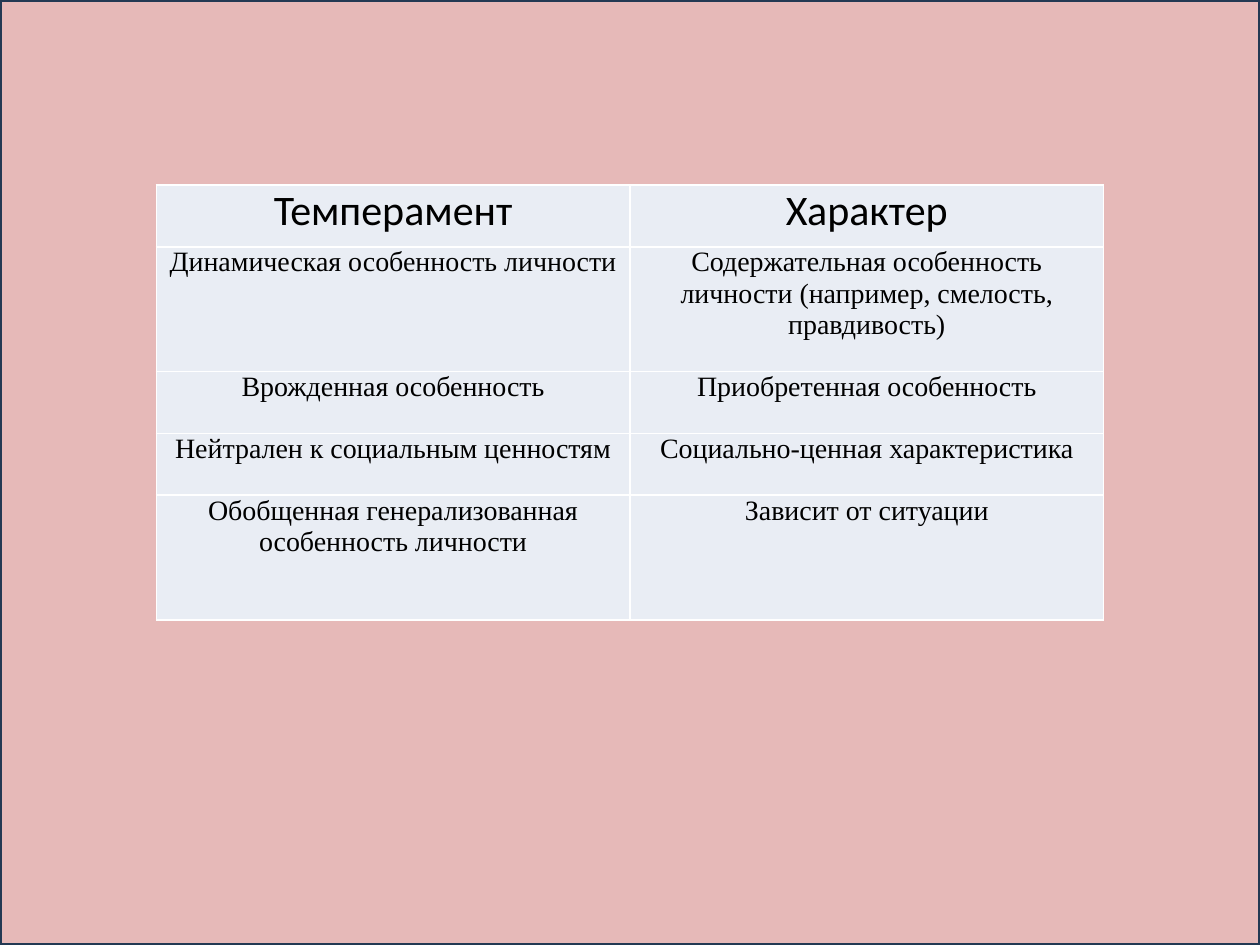
"""Build a slide with a table comparing temperament and character."""
from lxml import etree
from pptx import Presentation
from pptx.dml.color import RGBColor
from pptx.enum.shapes import MSO_SHAPE as Shape
from pptx.enum.text import PP_ALIGN as Align
from pptx.oxml import parse_xml
from pptx.oxml.ns import nsdecls, qn
from pptx.util import Inches, Pt


def color(value):
    return RGBColor.from_string(value)


def write(frame, text, size=16, font="Times New Roman", ink="000000"):
    paragraph = frame.paragraphs[0]
    paragraph.alignment = Align.CENTER
    run = paragraph.add_run()
    run.text = text
    run.font.size = Pt(size)
    run.font.name = font
    run.font.color.rgb = color(ink)


rows = [
    ("Темперамент", "Характер"),
    ("Динамическая особенность личности",
     "Содержательная особенность личности (например, смелость, правдивость)"),
    ("Врожденная особенность", "Приобретенная особенность"),
    ("Нейтрален к социальным ценностям", "Социально-ценная характеристика"),
    ("Обобщенная генерализованная особенность личности", "Зависит от ситуации"),
]
row_heights = [0.49, 0.99, 0.49, 0.49, 0.99]
column_width = 3.76

presentation = Presentation()
presentation.slide_width = Inches(10)
presentation.slide_height = Inches(7.5)
slide = presentation.slides.add_slide(presentation.slide_layouts[6])

backdrop = slide.shapes.add_shape(
    Shape.RECTANGLE, 0, 0, presentation.slide_width, presentation.slide_height)
backdrop.shadow.inherit = False
backdrop.fill.solid()
backdrop.fill.fore_color.rgb = color("E6B9B8")
backdrop.line.color.rgb = color("233953")
backdrop.line.width = Pt(2)

table = slide.shapes.add_table(
    len(rows), 2, Inches(1.24), Inches(1.47),
    Inches(2 * column_width), Inches(sum(row_heights))).table
table.first_row = False
table.horz_banding = False
for column in table.columns:
    column.width = Inches(column_width)

for row_index, (texts, height) in enumerate(zip(rows, row_heights)):
    table.rows[row_index].height = Inches(height)
    heading = {"size": 24, "font": "Calibri"} if row_index == 0 else {}
    for column_index, text in enumerate(texts):
        cell = table.cell(row_index, column_index)
        cell.margin_left = cell.margin_right = Inches(0.07)
        cell.margin_top = cell.margin_bottom = 0
        properties = cell._tc.get_or_add_tcPr()
        for side in ("lnL", "lnR", "lnT", "lnB"):
            border = etree.SubElement(properties, qn(f"a:{side}"), w=str(Pt(1)))
            border.append(parse_xml(
                f'<a:solidFill {nsdecls("a")}><a:srgbClr val="FFFFFF"/></a:solidFill>'))
        cell.fill.solid()
        cell.fill.fore_color.rgb = color("E9EDF4")
        write(cell.text_frame, text, **heading)

presentation.save("out.pptx")
